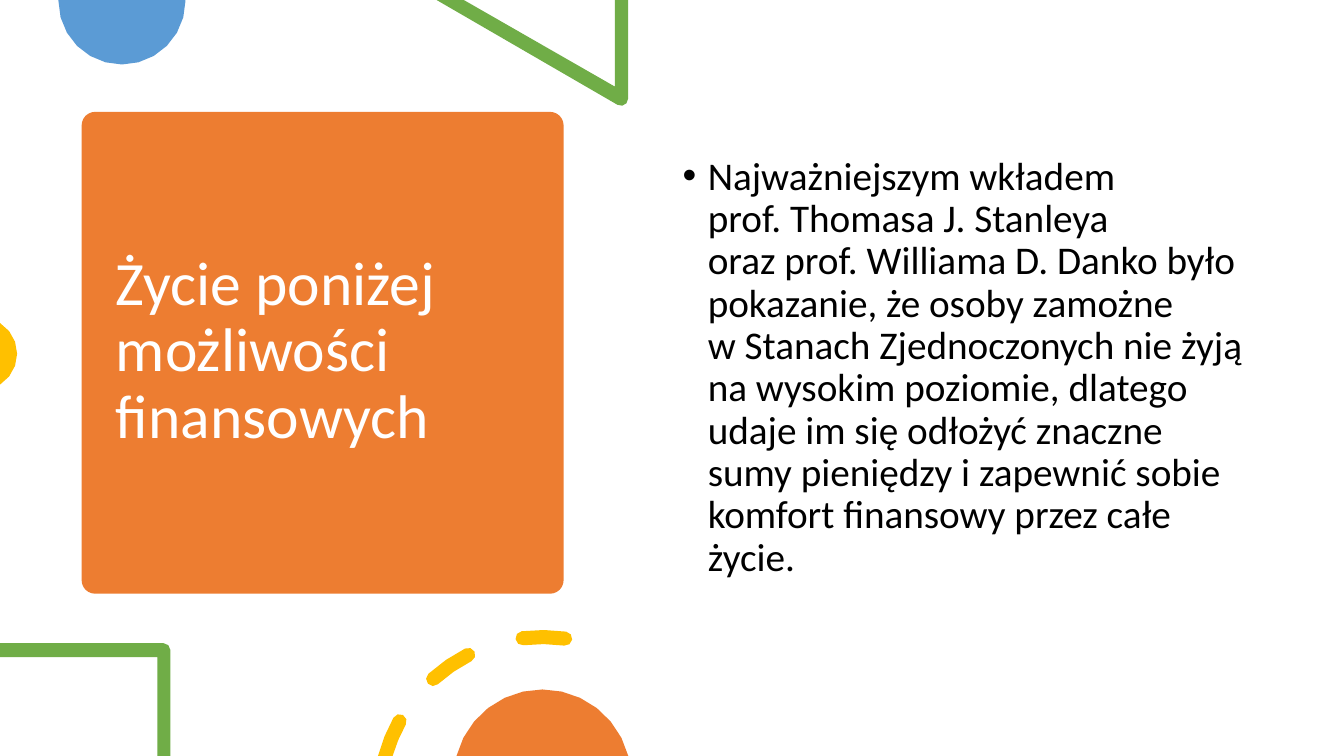
import math
from pptx import Presentation
from pptx import util as u
from pptx.dml.color import RGBColor
from pptx.enum import shapes, text

PX = 9144
WIDTH, HEIGHT = 1333, 750
FONT = "Calibri"
COLORS = {
    "orange": "ED7D31",
    "blue": "5B9BD5",
    "green": "70AD47",
    "yellow": "FFC000",
    "white": "FFFFFF",
    "black": "000000",
}
HARD_SPACE = chr(160)
TITLE = "Życie poniżej możliwości finansowych"
BODY = (
    "Najważniejszym wkładem prof.~Thomasa J. Stanleya oraz~prof.~Williama D. Danko "
    "było pokazanie, że~osoby zamożne w~Stanach Zjednoczonych nie~żyją "
    "na~wysokim poziomie, dlatego udaje im się odłożyć znaczne sumy pieniędzy "
    "i~zapewnić sobie komfort finansowy przez~całe życie.~"
).replace("~", HARD_SPACE)


def px(value):
    return u.Emu(round(value * PX))


def paint(shape, color):
    shape.fill.solid()
    shape.fill.fore_color.rgb = RGBColor.from_string(COLORS[color])
    shape.line.fill.background()
    shape.shadow.inherit = False


def polar(center, radius, angle):
    turn = math.radians(angle)
    return center[0] + radius * math.cos(turn), center[1] + radius * math.sin(turn)


def arc(center, radius, start, end):
    steps = max(2, round(math.sqrt(radius) * abs(end - start) / 120))
    return [polar(center, radius, start + (end - start) * i / steps) for i in range(steps + 1)]


def cap(center, radius, half, angle, start):
    return arc(polar(center, radius, angle), half, start, start + 180)[1:-1]


def dash(center, radius, half, start, end):
    return (
        arc(center, radius + half, start, end)
        + cap(center, radius, half, end, end)
        + arc(center, radius - half, end, start)
        + cap(center, radius, half, start, start + 180)
    )


def cut_dash(center, radius, half, end):
    outer, inner = (
        180 + math.degrees(math.asin((center[1] - HEIGHT) / (radius + side)))
        for side in (half, -half)
    )
    return (
        arc(center, radius + half, outer, end)
        + cap(center, radius, half, end, end)
        + arc(center, radius - half, end, inner)
    )


def add_outline(page, color, *outlines):
    builder = None
    for outline in outlines:
        points = [(px(x), px(y)) for x, y in outline]
        if builder is None:
            builder = page.shapes.build_freeform(*points[0])
        else:
            builder.move_to(*points[0])
        builder.add_line_segments(points[1:], close=True)
    paint(builder.convert_to_shape(), color)


def add_card(page, left, top, width, height):
    card = page.shapes.add_shape(
        shapes.MSO_SHAPE.ROUNDED_RECTANGLE, px(left), px(top), px(width), px(height)
    )
    card.adjustments[0] = 0.028
    paint(card, "orange")
    page.shapes.title.element.addprevious(card.element)


def fill_placeholder(box, frame, words, size, color, anchor):
    box.left, box.top, box.width, box.height = map(px, frame)
    box.text_frame.text = words
    box.text_frame.word_wrap = True
    box.text_frame.auto_size = text.MSO_AUTO_SIZE.NONE
    box.text_frame.vertical_anchor = anchor
    para = box.text_frame.paragraphs[0]
    para.alignment = text.PP_ALIGN.LEFT
    para.line_spacing = 0.9
    para.space_before = u.Pt(0)
    span = para.runs[0]
    span.font.size = u.Pt(size)
    span.font.name = FONT
    span.font.color.rgb = RGBColor.from_string(COLORS[color])
    return para


def add_decorations(page):
    add_outline(page, "blue", arc((121, 1), 63, 0, 180) + [(58, 0), (184, 0)])
    add_outline(
        page, "green",
        [(433, 0), (460, 0), (610, 86), (610, 0), (623, 0)] + arc((616, 98), 7, 0, 120),
    )
    add_outline(page, "yellow", arc((-19, 351), 36, -58, 58))
    add_outline(
        page, "green",
        [(0, 638)] + arc((162, 645), 7, 270, 360)
        + [(169, 750), (156, 750), (156, 652), (0, 652)],
    )
    ring = (538, 794), 162, 7
    add_outline(
        page, "yellow",
        cut_dash(*ring, 209), dash(*ring, 228, 243), dash(*ring, 263, 278),
    )
    add_outline(page, "orange", arc((538, 772), 88, 194.5, 345.5))


def main():
    deck = Presentation()
    deck.slide_width, deck.slide_height = px(WIDTH), px(HEIGHT)
    page = deck.slides.add_slide(deck.slide_layouts[1])
    add_card(page, 81, 111, 478, 478)
    fill_placeholder(
        page.shapes.title, (105, 121, 431, 456), TITLE, 44, "white", text.MSO_ANCHOR.MIDDLE
    )
    body = page.placeholders[1]
    para = fill_placeholder(
        body, (667, 90, 575, 535), BODY, 28, "black", text.MSO_ANCHOR.TOP
    )
    body.text_frame.margin_top = px(65)
    properties = para._p.get_or_add_pPr()
    properties.set("marL", str(px(25)))
    properties.set("indent", str(px(-25)))
    add_decorations(page)
    deck.save("out.pptx")


if __name__ == "__main__":
    main()
